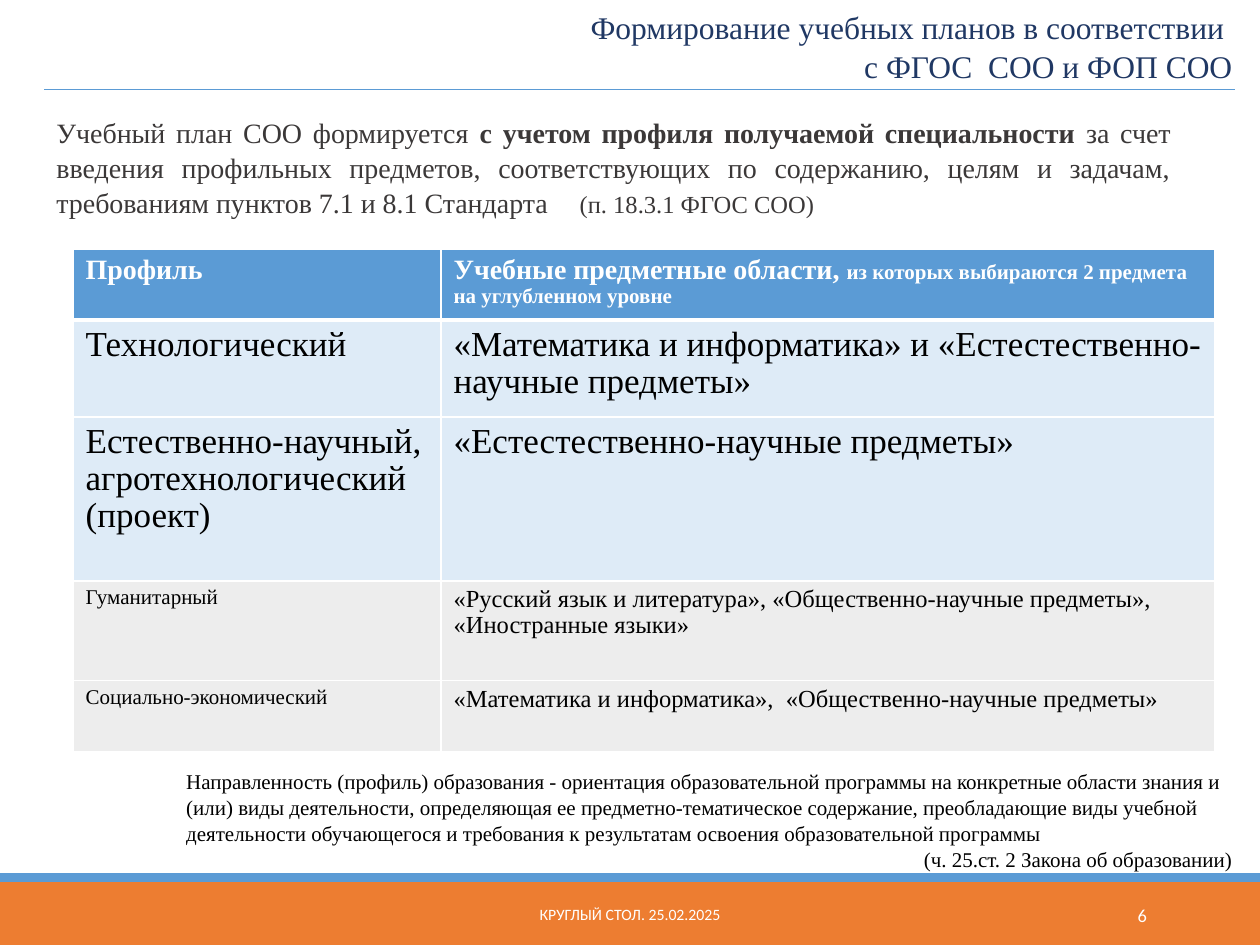
from lxml import etree
from pptx import Presentation
from pptx.dml.color import RGBColor
from pptx.enum.shapes import MSO_CONNECTOR, MSO_SHAPE
from pptx.enum.text import MSO_ANCHOR, PP_ALIGN
from pptx.oxml import parse_xml
from pptx.oxml.ns import nsdecls, qn
from pptx.util import Inches, Pt

LEFT, CENTER, RIGHT = PP_ALIGN.LEFT, PP_ALIGN.CENTER, PP_ALIGN.RIGHT
JUSTIFY = PP_ALIGN.JUSTIFY
TOP, MIDDLE = MSO_ANCHOR.TOP, MSO_ANCHOR.MIDDLE
RECTANGLE, STRAIGHT = MSO_SHAPE.RECTANGLE, MSO_CONNECTOR.STRAIGHT

BLUE = RGBColor(0x5B, 0x9B, 0xD5)
ORANGE = RGBColor(0xED, 0x7D, 0x31)
NAVY = RGBColor(0x20, 0x38, 0x64)
CHARCOAL = RGBColor(0x3B, 0x38, 0x38)
PALE_BLUE = RGBColor(0xDE, 0xEB, 0xF7)
PALE_GRAY = RGBColor(0xED, 0xED, 0xED)
WHITE = RGBColor(0xFF, 0xFF, 0xFF)
BLACK = RGBColor(0x00, 0x00, 0x00)

SERIF, SANS = "Times New Roman", "Calibri"
BOX_SPACING, CELL_SPACING = 1.04, 0.96

COLUMN_WIDTHS = [2.92, 6.14]
ROW_HEIGHTS = [0.56, 0.77, 1.3, 0.79, 0.57]

# Each row: fill, text colour, then the (text, size) runs of each cell
PROFILE_ROWS = [
    (BLUE, WHITE, [("Профиль", 16)],
     [("Учебные предметные области, ", 16),
      ("из которых выбираются 2 предмета на углубленном уровне", 12)]),
    (PALE_BLUE, BLACK, [("Технологический", 20)],
     [("«Математика и информатика» и «Естестественно-научные предметы»", 20)]),
    (PALE_BLUE, BLACK, [("Естественно-научный, агротехнологический (проект)", 20)],
     [("«Естестественно-научные предметы»", 20)]),
    (PALE_GRAY, BLACK, [("Гуманитарный", 12)],
     [("«Русский язык и литература», «Общественно-научные предметы», "
       "«Иностранные языки»", 14)]),
    (PALE_GRAY, BLACK, [("Социально-экономический", 12)],
     [("«Математика и информатика»,  «Общественно-научные предметы»", 14)]),
]


def add_runs(paragraph, runs, color, name=SERIF):
    """Add (text, size[, bold]) runs to a paragraph."""
    for text, size, *bold in runs:
        run = paragraph.add_run()
        run.text = text
        font_format = {"name": name, "size": Pt(size), "bold": bool(bold and bold[0])}
        for attribute, value in font_format.items():
            setattr(run.font, attribute, value)
        run.font.color.rgb = color


def add_text(slide, box, paragraphs, color, name=SERIF, anchor=TOP, spacing=BOX_SPACING):
    """Add a text box; paragraphs are (alignment, runs) pairs."""
    frame = slide.shapes.add_textbox(*map(Inches, box)).text_frame
    frame.word_wrap = True
    frame.vertical_anchor = anchor
    for index, (alignment, runs) in enumerate(paragraphs):
        paragraph = frame.add_paragraph() if index else frame.paragraphs[0]
        paragraph.alignment = alignment
        paragraph.line_spacing = spacing
        add_runs(paragraph, runs, color, name)


def add_band(slide, top, height, color):
    shape = slide.shapes.add_shape(
        RECTANGLE, Inches(0), Inches(top), Inches(10), Inches(height))
    shape.shadow.inherit = False
    shape.fill.solid()
    shape.fill.fore_color.rgb = color
    shape.line.fill.background()


def add_rule(slide, left, right, top):
    rule = slide.shapes.add_connector(
        STRAIGHT, Inches(left), Inches(top), Inches(right), Inches(top))
    rule.line.color.rgb = BLUE
    rule.line.width = Pt(1)
    etree.SubElement(rule._element.spPr, qn("a:effectLst"))


def set_borders(cell, widths):
    """Draw white borders; widths maps a side tag to points."""
    properties = cell._tc.get_or_add_tcPr()
    for index, (side, width) in enumerate(widths.items()):
        properties.insert(index, parse_xml(
            f'<a:{side} {nsdecls("a")} w="{Pt(width)}"><a:solidFill>'
            f'<a:srgbClr val="{WHITE}"/></a:solidFill></a:{side}>'))


def add_profile_table(slide):
    table = slide.shapes.add_table(
        len(ROW_HEIGHTS), len(COLUMN_WIDTHS), Inches(0.58), Inches(1.98),
        Inches(sum(COLUMN_WIDTHS)), Inches(sum(ROW_HEIGHTS))).table
    for column, width in zip(table.columns, COLUMN_WIDTHS):
        column.width = Inches(width)
    for index, (fill, color, *cells) in enumerate(PROFILE_ROWS):
        header = index == 0
        table.rows[index].height = Inches(ROW_HEIGHTS[index])
        for cell, runs in zip(table.rows[index].cells, cells):
            cell.fill.solid()
            cell.fill.fore_color.rgb = fill
            set_borders(cell, {"lnL": 1, "lnR": 1, "lnT": 3 if index == 1 else 1,
                               "lnB": 3 if header else 1})
            paragraph = cell.text_frame.paragraphs[0]
            paragraph.line_spacing = CELL_SPACING
            add_runs(paragraph, [(text, size, header) for text, size in runs], color)


def main():
    presentation = Presentation()
    presentation.slide_width = Inches(10)
    presentation.slide_height = Inches(7.5)
    slide = presentation.slides.add_slide(presentation.slide_layouts[6])

    # Footer bands
    add_band(slide, 7, 0.5, ORANGE)
    add_band(slide, 6.93, 0.07, BLUE)

    # Introduction
    add_text(slide, (0.35, 0.86, 9.04, 0.91), [(JUSTIFY, [
        ("Учебный план СОО формируется ", 16),
        ("с учетом профиля получаемой специальности ", 16, True),
        ("за счет введения профильных предметов, соответствующих по содержанию, "
         "целям и задачам, требованиям пунктов 7.1 и 8.1 Стандарта ", 16),
        ("    (п. 18.3.1 ФГОС СОО)", 14)])], CHARCOAL)

    add_profile_table(slide)

    # Definition and its reference
    add_text(slide, (1.38, 6.04, 8.5, 0.91), [
        (LEFT, [("Направленность (профиль) образования - ориентация образовательной "
                 "программы на конкретные области знания и (или) виды деятельности, "
                 "определяющая ее предметно-тематическое содержание, преобладающие "
                 "виды учебной деятельности обучающегося и требования к результатам "
                 "освоения образовательной программы", 12)]),
        (RIGHT, [("(ч. 25.ст. 2 Закона об образовании)", 12)])], BLACK)

    # Footer text and slide number
    add_text(slide, (3.02, 7.06, 3.96, 0.4),
             [(CENTER, [("КРУГЛЫЙ СТОЛ. 25.02.2025", 9)])], WHITE, SANS, MIDDLE, 1.0)
    add_text(slide, (8.12, 7.06, 1.08, 0.4),
             [(RIGHT, [("6", 10.5)])], WHITE, SANS, MIDDLE, 1.0)

    # Title and the rule below it
    add_text(slide, (3.9, 0, 5.98, 0.71), [
        (RIGHT, [("Формирование учебных планов в соответствии ", 18)]),
        (RIGHT, [("с ФГОС  СОО и ФОП СОО", 18)])], NAVY)
    add_rule(slide, 0.35, 9.8, 0.71)

    presentation.save("out.pptx")


if __name__ == "__main__":
    main()
